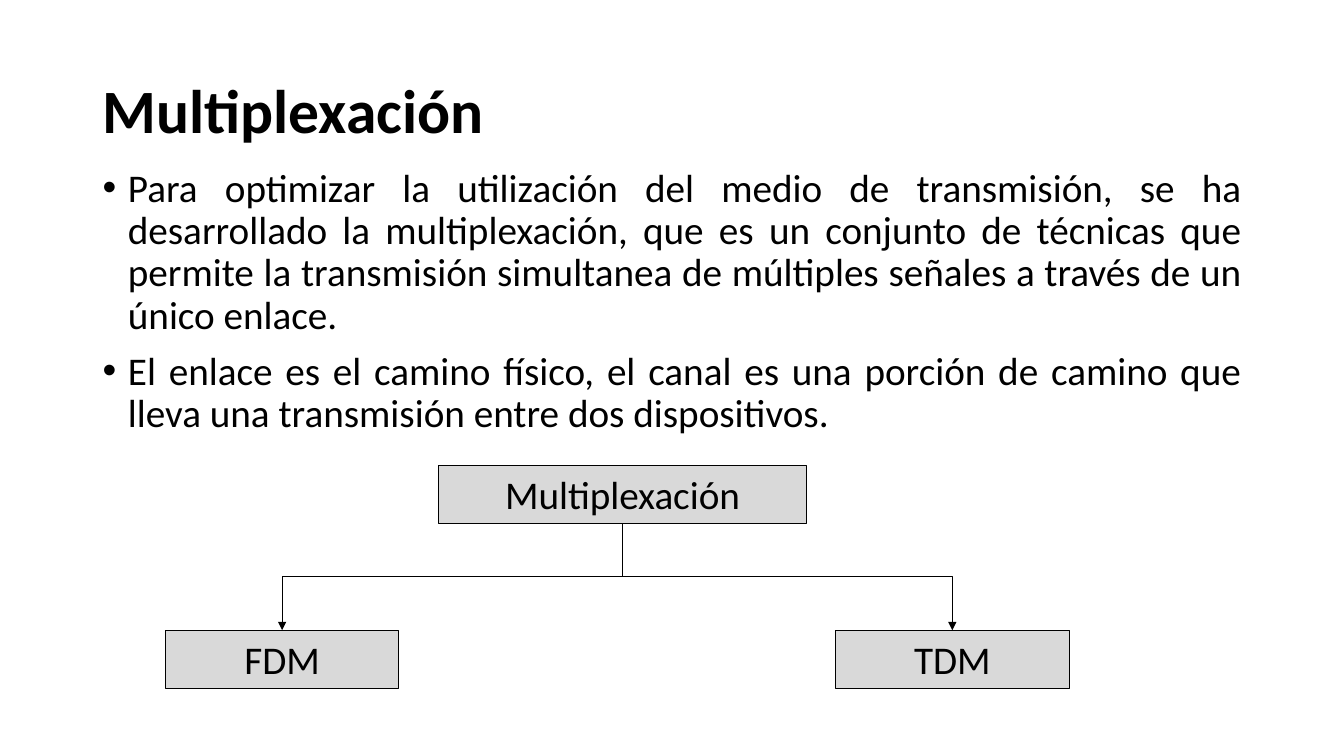
from lxml import etree
from pptx import Presentation
from pptx.dml.color import RGBColor
from pptx.enum import shapes, text
from pptx.oxml.ns import qn
from pptx.util import Cm, Pt

BLACK = RGBColor(0x00, 0x00, 0x00)
GREY = RGBColor(0xD9, 0xD9, 0xD9)
BODY_FONT = {"name": "Calibri", "size": Pt(28), "bold": False}
TITLE_FONT = {"name": "Calibri", "size": Pt(44), "bold": True}


def format_paragraph(paragraph, font_values, paragraph_values):
    for name, value in font_values.items():
        setattr(paragraph.font, name, value)
    paragraph.font.color.rgb = BLACK
    for name, value in paragraph_values.items():
        setattr(paragraph, name, value)


def place(shape, left, top, width, height):
    shape.left, shape.top = Cm(left), Cm(top)
    shape.width, shape.height = Cm(width), Cm(height)


presentation = Presentation()
presentation.slide_width, presentation.slide_height = Cm(33.87), Cm(19.05)
slide = presentation.slides.add_slide(presentation.slide_layouts[1])

# Title
title = slide.shapes.title
place(title, 2.33, 1.02, 29.21, 3.68)
title.text_frame.text = "Multiplexación"
title.text_frame.vertical_anchor = text.MSO_ANCHOR.MIDDLE
format_paragraph(title.text_frame.paragraphs[0], TITLE_FONT,
                 {"alignment": text.PP_ALIGN.LEFT, "line_spacing": 0.9})

# Bulleted explanation
body = slide.placeholders[1]
place(body, 2.33, 4.11, 29.21, 7.21)
body.text_frame.text = "\n".join([
    "Para optimizar la utilización del medio de transmisión, se ha desarrollado "
    "la multiplexación, que es un conjunto de técnicas que permite la transmisión "
    "simultanea de múltiples señales a través de un único enlace.",
    "El enlace es el camino físico, el canal es una porción de camino que lleva "
    "una transmisión entre dos dispositivos.",
])
body.text_frame.auto_size = text.MSO_AUTO_SIZE.NONE
for index, paragraph in enumerate(body.text_frame.paragraphs):
    properties = paragraph._p.get_or_add_pPr()
    properties.set("marL", str(Cm(0.64)))
    properties.set("indent", str(-Cm(0.64)))
    etree.SubElement(properties, qn("a:buFont"), typeface="Arial")
    etree.SubElement(properties, qn("a:buChar"), char="•")
    format_paragraph(paragraph, BODY_FONT, {
        "alignment": text.PP_ALIGN.JUSTIFY,
        "line_spacing": 0.9,
        "space_before": Pt(10 if index else 0),
    })

# Diagram boxes: label, centre, top, width
ROOT_CENTRE, ROOT_TOP, BRANCH_TOP, BOX_HEIGHT = 15.69, 11.73, 15.88, 1.46
branches = [("FDM", 7.11), ("TDM", 24.0)]
boxes = [("Multiplexación", ROOT_CENTRE, ROOT_TOP, 9.27)]
boxes += [(label, centre, BRANCH_TOP, 5.89) for label, centre in branches]
for label, centre, top, width in boxes:
    box = slide.shapes.add_shape(
        shapes.MSO_SHAPE.RECTANGLE,
        Cm(centre - width / 2), Cm(top), Cm(width), Cm(BOX_HEIGHT))
    box.shadow.inherit = False
    box.fill.solid()
    box.fill.fore_color.rgb = GREY
    box.line.color.rgb = BLACK
    box.line.width = Pt(0.75)
    box.text_frame.text = label
    box.text_frame.word_wrap = True
    box.text_frame.vertical_anchor = text.MSO_ANCHOR.TOP
    format_paragraph(box.text_frame.paragraphs[0], BODY_FONT,
                     {"alignment": text.PP_ALIGN.CENTER})

# Elbow arrows: laid out sideways, then turned a quarter so they leave downwards
root_bottom = ROOT_TOP + BOX_HEIGHT
middle_y = (root_bottom + BRANCH_TOP) / 2
half_drop = (BRANCH_TOP - root_bottom) / 2
for label, centre in branches:
    side = 1 if centre > ROOT_CENTRE else -1
    middle_x = (ROOT_CENTRE + centre) / 2
    half_span = abs(centre - ROOT_CENTRE) / 2
    arrow = slide.shapes.add_connector(
        shapes.MSO_CONNECTOR.ELBOW,
        Cm(middle_x + side * half_drop), Cm(middle_y - half_span),
        Cm(middle_x - side * half_drop), Cm(middle_y + half_span))
    arrow.line.color.rgb = BLACK
    arrow.line.width = Pt(0.5)
    drawing = arrow._element.spPr
    drawing.find(qn("a:xfrm")).set("rot", str((-side % 4) * 90 * 60000))
    etree.SubElement(drawing.find(qn("a:ln")), qn("a:tailEnd"), type="triangle")
    etree.SubElement(drawing, qn("a:effectLst"))

presentation.save("out.pptx")
